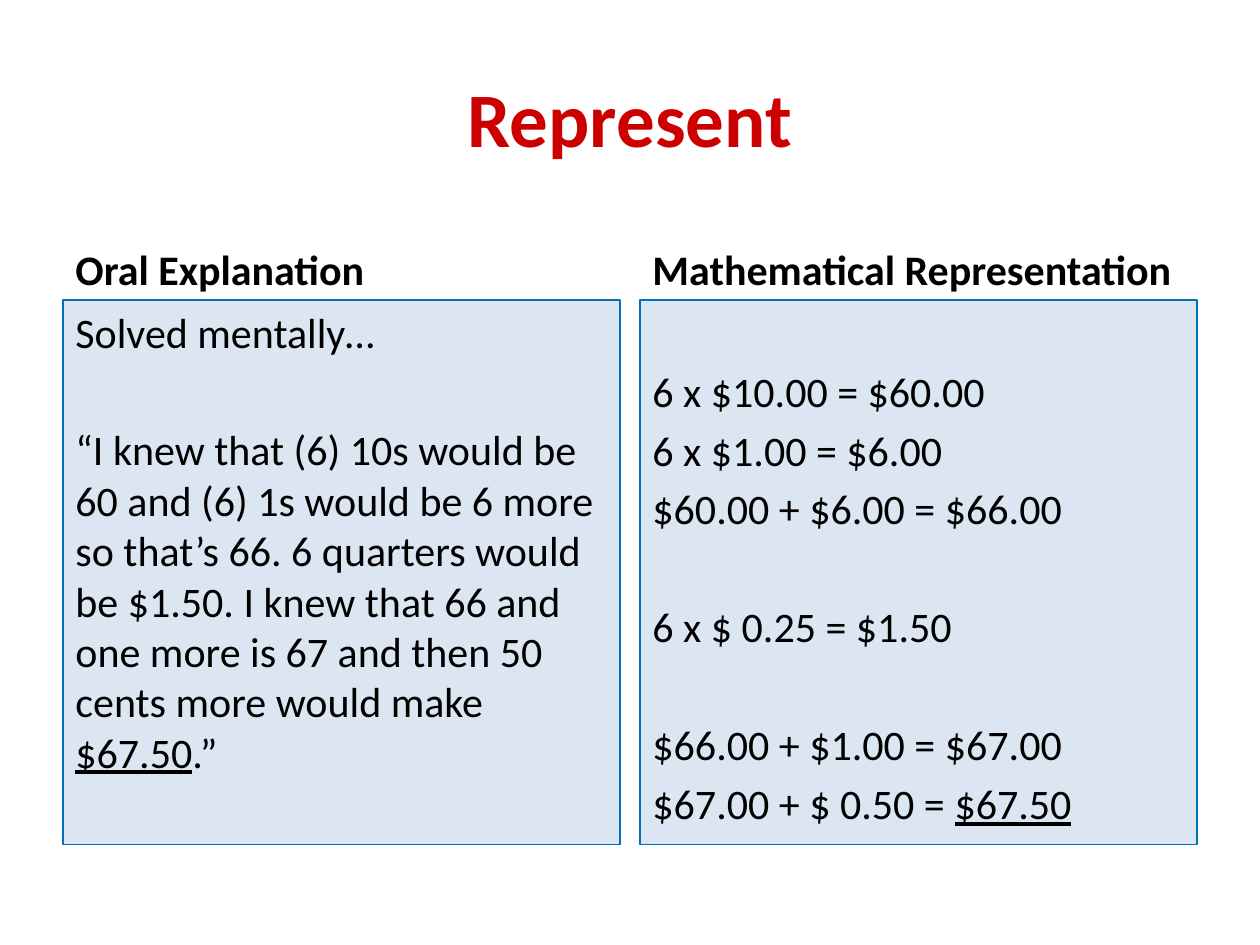
from pptx import Presentation
from pptx.dml.color import RGBColor
from pptx.enum.shapes import MSO_SHAPE
from pptx.enum.text import MSO_ANCHOR as Anchor, PP_ALIGN as Align
from pptx.util import Inches, Pt

COLORS = {"title": "CC0000", "text": "000000", "panel": "DCE6F2", "border": "0070C0"}
BODY = {"name": "Calibri", "size": Pt(24), "bold": False}
HEADING = {**BODY, "bold": True}
TITLE = {**HEADING, "size": Pt(44)}

GAP = 4.8        # normal space before a paragraph, in points
WIDE_GAP = 38.5  # space before a paragraph that opens a new step

# Each paragraph: space before, plain text, underlined text, closing text
ORAL = [
    (0, "Solved mentally…", "", ""),
    (WIDE_GAP, "“I knew that (6) 10s would be 60 and (6) 1s would be 6 more "
     "so that’s 66. 6 quarters would be $1.50. I knew that 66 and one more is 67 "
     "and then 50 cents more would make ", "$67.50", ".”"),
]
MATH = [
    (0, "6 x $10.00 = $60.00", "", ""),
    (GAP, "6 x $1.00 = $6.00", "", ""),
    (GAP, "$60.00 + $6.00 = $66.00", "", ""),
    (WIDE_GAP, "6 x $ 0.25 = $1.50", "", ""),
    (WIDE_GAP, "$66.00 + $1.00 = $67.00", "", ""),
    (GAP, "$67.00 + $ 0.50 = ", "$67.50", ""),
]


def rgb(key):
    return RGBColor.from_string(COLORS[key])


def add_run(p, text, style, color="text"):
    r = p.add_run()
    r.text = text
    for name, value in style.items():
        setattr(r.font, name, value)
    r.font.color.rgb = rgb(color)
    return r


def add_title(s, text, left, top, width, height):
    title = s.shapes.title
    title.left, title.top, title.width, title.height = left, top, width, height
    tf = title.text_frame
    tf.vertical_anchor = Anchor.MIDDLE
    p = tf.paragraphs[0]
    p.alignment = Align.CENTER
    add_run(p, text, TITLE, "title")


def add_heading(s, text, left, top, width, height):
    tf = s.shapes.add_textbox(left, top, width, height).text_frame
    tf.word_wrap = True
    tf.vertical_anchor = Anchor.BOTTOM
    add_run(tf.paragraphs[0], text, HEADING)


def add_panel(s, paragraphs, margin_top, left, top, width, height):
    sp = s.shapes.add_shape(MSO_SHAPE.RECTANGLE, left, top, width, height)
    sp.shadow.inherit = False
    sp.fill.solid()
    sp.fill.fore_color.rgb = rgb("panel")
    sp.line.color.rgb = rgb("border")
    sp.line.width = Pt(0.75)
    tf = sp.text_frame
    tf.word_wrap = True
    tf.vertical_anchor = Anchor.TOP
    tf.margin_top = margin_top
    for i, (space, plain, underlined, closing) in enumerate(paragraphs):
        p = tf.add_paragraph() if i else tf.paragraphs[0]
        p.alignment = Align.LEFT
        if space:
            p.space_before = Pt(space)
        add_run(p, plain, BODY)
        if underlined:
            add_run(p, underlined, {**BODY, "underline": True})
        if closing:
            add_run(p, closing, BODY)


def add_column(s, heading, paragraphs, margin_top, left, top, width, height):
    """Heading above a filled panel."""
    heading_height = Inches(0.7)
    add_heading(s, heading, left, top, width, heading_height)
    add_panel(s, paragraphs, margin_top, left, top + heading_height,
              width, height - heading_height)


def main():
    prs = Presentation()
    prs.slide_width, prs.slide_height = Inches(10), Inches(7.5)
    s = prs.slides.add_slide(prs.slide_layouts[5])

    # Title
    add_title(s, "Represent", Inches(0.5), Inches(0.3), Inches(9), Inches(1.25))

    # Two columns, mirrored about the slide centre
    top, width, height = Inches(1.68), Inches(4.42), Inches(5.02)
    left = Inches(0.5)
    right = prs.slide_width - left - width
    add_column(s, "Oral Explanation", ORAL, Inches(0.05), left, top, width, height)
    add_column(s, "Mathematical Representation", MATH, Inches(0.52),
               right, top, width, height)

    prs.save("out.pptx")


if __name__ == "__main__":
    main()
